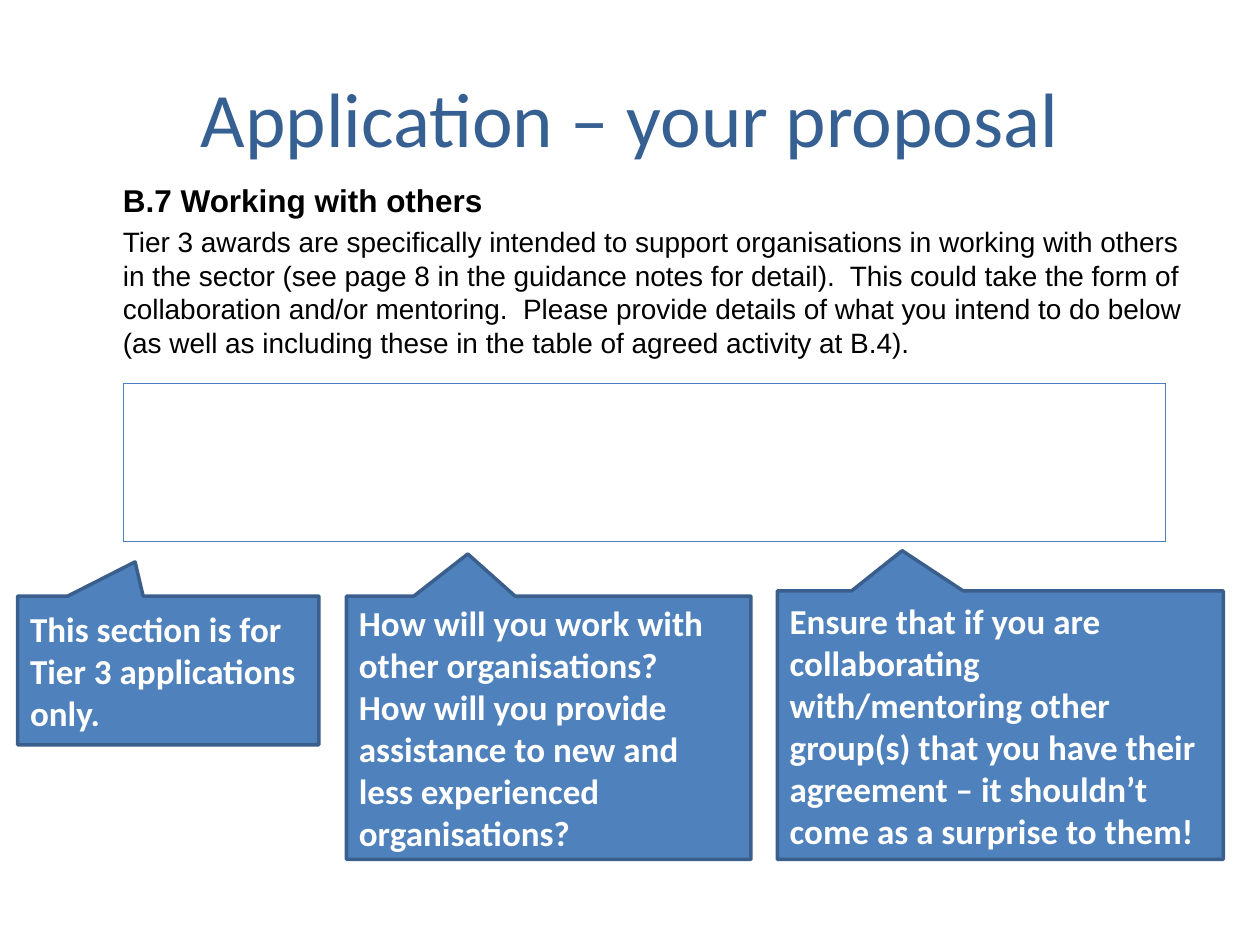
from pptx import Presentation
from pptx.dml.color import RGBColor
from pptx.enum import shapes as sh, text as tx
from pptx.oxml import parse_xml
from pptx.oxml.ns import nsdecls
from pptx.util import Pt


def hue(code):
    """Turn a hex string into a colour."""
    return RGBColor.from_string(code)


def put(shape, box):
    """Move a shape to a box given in points."""
    shape.left, shape.top, shape.width, shape.height = map(Pt, box)


def add_run(para, words, size, font, code, bold=False):
    """Add one formatted run."""
    run = para.add_run()
    run.text = words
    run.font.size, run.font.name, run.font.bold = Pt(size), font, bold
    run.font.color.rgb = hue(code)


def add_title(slide, box, words):
    """Fill the title placeholder."""
    title = slide.shapes.title
    put(title, box)
    frame = title.text_frame
    frame.vertical_anchor = tx.MSO_ANCHOR.MIDDLE
    para = frame.paragraphs[0]
    para.alignment = tx.PP_ALIGN.CENTER
    add_run(para, words, 44, "Calibri", "376092")


def add_body(slide, box, items):
    """Fill the body placeholder with unbulleted paragraphs."""
    body = slide.placeholders[1]
    put(body, box)
    frame = body.text_frame
    frame.auto_size = tx.MSO_AUTO_SIZE.NONE
    for i, (words, size, bold) in enumerate(items):
        para = frame.add_paragraph() if i else frame.paragraphs[0]
        para.space_before = Pt(size * 0.2)
        props = para._p.get_or_add_pPr()
        props.set("marL", str(Pt(27)))
        props.set("indent", "0")
        props.append(parse_xml(f"<a:buNone {nsdecls('a')}/>"))
        add_run(para, words, size, "Arial", "000000", bold)


def add_frame(slide, box):
    """Draw the answer box from four lines."""
    x, y, w, h = box
    r, b = x + w, y + h
    for ends in ((x, y, x, b), (x, y, r, y), (x, b, r, b), (r, y, r, b)):
        line = slide.shapes.add_connector(sh.MSO_CONNECTOR.STRAIGHT, *map(Pt, ends))
        line.line.color.rgb = hue("4B7EBC")
        line.line.width = Pt(0.75)
        line._element.spPr.append(parse_xml(f"<a:effectLst {nsdecls('a')}/>"))


def add_note(slide, box, tip, lines):
    """Draw a callout whose tip is a fraction of its size from its centre."""
    note = slide.shapes.add_shape(sh.MSO_SHAPE.RECTANGULAR_CALLOUT, *map(Pt, box))
    note.adjustments[0], note.adjustments[1] = tip
    note.shadow.inherit = False
    note.fill.solid()
    note.fill.fore_color.rgb = hue("4F81BD")
    note.line.color.rgb = hue("3A5F8C")
    note.line.width = Pt(2)
    frame = note.text_frame
    frame.word_wrap = True
    frame.vertical_anchor = tx.MSO_ANCHOR.MIDDLE
    for i, words in enumerate(lines):
        para = frame.add_paragraph() if i else frame.paragraphs[0]
        para.alignment = tx.PP_ALIGN.LEFT
        add_run(para, words, 20, "Calibri", "FFFFFF", True)


def main():
    """Build the slide and save it."""
    deck = Presentation()
    deck.slide_width, deck.slide_height = Pt(720), Pt(540)
    slide = deck.slides.add_slide(deck.slide_layouts[1])
    add_title(slide, (36, 21.6, 648, 90), "Application – your proposal")
    add_body(slide, (36, 100, 648, 382), [
        ("B.7 Working with others", 18, True),
        ("Tier 3 awards are specifically intended to support organisations in "
         "working with others in the sector (see page 8 in the guidance notes for "
         "detail).  This could take the form of collaboration and/or mentoring.  "
         "Please provide details of what you intend to do below (as well as "
         "including these in the table of agreed activity at B.4).", 16, False)])
    add_frame(slide, (70.6, 219, 595.4, 90.6))
    notes = [
        ((444.2, 337.7, 254.9, 153.4), (-0.22, -0.65),
         ["Ensure that if you are collaborating with/mentoring other group(s) that "
          "you have their agreement – it shouldn’t come as a surprise to them!"]),
        ((10.1, 340.6, 172.1, 85), (-0.11, -0.73),
         ["This section is for Tier 3 applications only."]),
        ((198, 340.6, 231.1, 150.5), (-0.2, -0.66),
         ["How will you work with other organisations?",
          "How will you provide assistance to new and less experienced "
          "organisations?"])]
    for box, tip, lines in notes:
        add_note(slide, box, tip, lines)
    deck.save("out.pptx")


if __name__ == "__main__":
    main()
